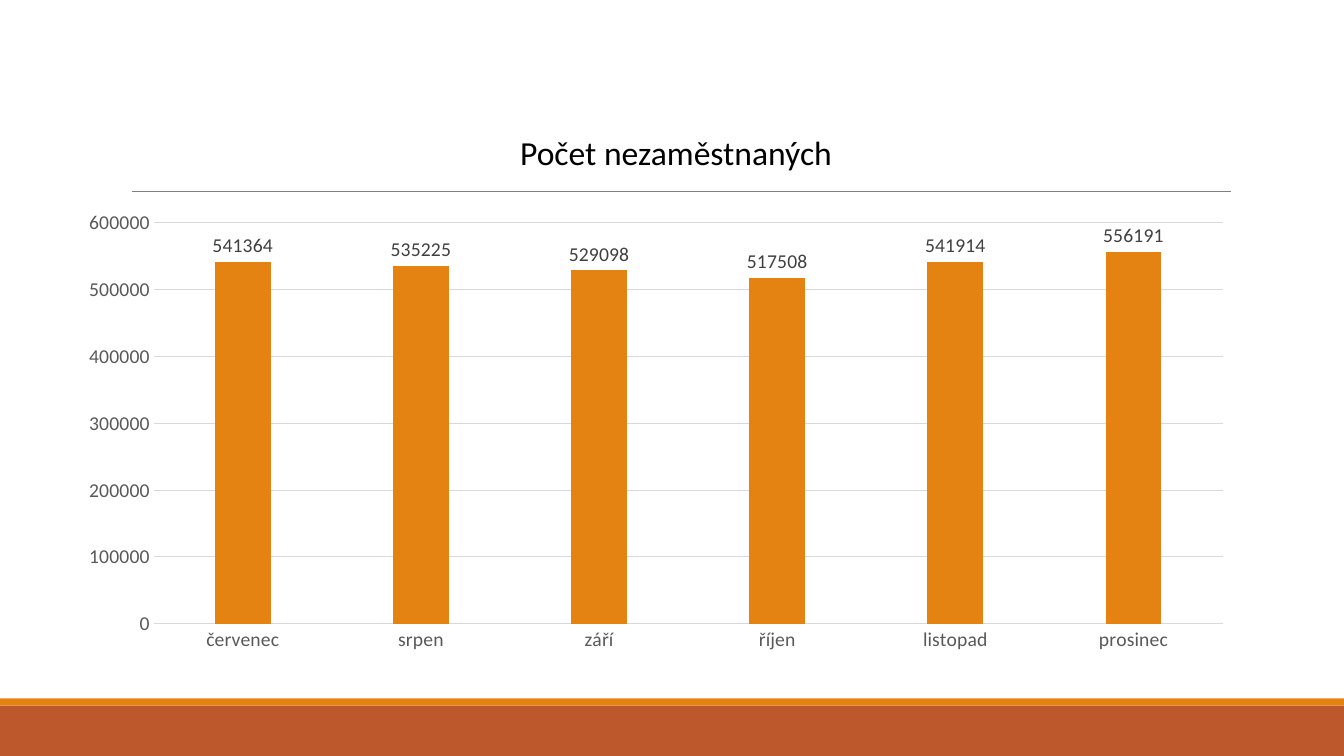
from dataclasses import dataclass

from lxml import etree
from pptx import Presentation
from pptx.chart.data import CategoryChartData
from pptx.dml.color import RGBColor
from pptx.enum import chart as charts, shapes, text
from pptx.oxml.ns import qn
from pptx.util import Inches, Pt


@dataclass(frozen=True)
class Theme:
    font: str = "Calibri"
    title_size: int = 24
    label_size: int = 14
    ink: str = "000000"
    value_ink: str = "404040"
    axis_ink: str = "595959"
    grid: str = "D9D9D9"
    rule: str = "808080"
    orange: str = "E48312"
    rust: str = "BD582C"


@dataclass(frozen=True)
class Band:
    top: float
    height: float
    color: str


THEME = Theme()
WIDTH, HEIGHT = 13.33, 7.5
BANDS = [Band(7, 0.5, THEME.rust), Band(6.93, 0.07, THEME.orange)]
UNEMPLOYED = {
    "červenec": 541364,
    "srpen": 535225,
    "září": 529098,
    "říjen": 517508,
    "listopad": 541914,
    "prosinec": 556191,
}


def style_font(font, size: int, color: str) -> None:
    font.name = THEME.font
    font.size = Pt(size)
    font.color.rgb = RGBColor.from_string(color)


def style_line(line, color: str, width: float) -> None:
    line.color.rgb = RGBColor.from_string(color)
    line.width = Pt(width)


def draw_band(slide, band: Band) -> None:
    strip = slide.shapes.add_shape(
        shapes.MSO_SHAPE.RECTANGLE,
        Inches(0), Inches(band.top), Inches(WIDTH), Inches(band.height))
    strip.shadow.inherit = False
    strip.fill.solid()
    strip.fill.fore_color.rgb = RGBColor.from_string(band.color)
    strip.line.fill.background()


def draw_rule(slide) -> None:
    rule = slide.shapes.add_connector(
        shapes.MSO_CONNECTOR.STRAIGHT,
        Inches(1.31), Inches(1.9), Inches(12.21), Inches(1.9))
    style_line(rule.line, THEME.rule, 0.5)
    etree.SubElement(rule._element.spPr, qn("a:effectLst"))


def draw_chart(slide) -> None:
    data = CategoryChartData()
    data.categories = list(UNEMPLOYED)
    data.add_series("Series 1", list(UNEMPLOYED.values()))
    chart = slide.shapes.add_chart(
        charts.XL_CHART_TYPE.COLUMN_CLUSTERED,
        Inches(0.65), Inches(2), Inches(11.71), Inches(4.56), data).chart
    chart.has_legend = False
    chart.has_title = False
    style_font(chart.font, 10, THEME.ink)

    # Axes and gridlines
    months, counts = chart.category_axis, chart.value_axis
    for axis in (months, counts):
        axis.major_tick_mark = charts.XL_TICK_MARK.NONE
        axis.minor_tick_mark = charts.XL_TICK_MARK.NONE
        style_font(axis.tick_labels.font, THEME.label_size, THEME.axis_ink)
    style_line(months.format.line, THEME.grid, 0.75)
    counts.format.line.fill.background()
    counts.minimum_scale = 0
    counts.maximum_scale = 600000
    counts.major_unit = 100000
    style_line(counts.major_gridlines.format.line, THEME.grid, 0.75)

    # Columns and their values
    columns = chart.plots[0]
    columns.gap_width = 219
    columns.overlap = -27
    columns.vary_by_categories = False
    series = columns.series[0]
    series.format.fill.solid()
    series.format.fill.fore_color.rgb = RGBColor.from_string(THEME.orange)
    values = series.data_labels
    values.show_value = True
    values.position = charts.XL_LABEL_POSITION.OUTSIDE_END
    style_font(values.font, THEME.label_size, THEME.value_ink)


def place_title(slide) -> None:
    title = slide.shapes.title
    title.left, title.top = Inches(1.29), Inches(1.26)
    title.width, title.height = Inches(10.83), Inches(0.5)
    frame = title.text_frame
    frame.text = "Počet nezaměstnaných"
    frame.word_wrap = True
    frame.auto_size = text.MSO_AUTO_SIZE.SHAPE_TO_FIT_TEXT
    frame.vertical_anchor = text.MSO_ANCHOR.TOP
    heading = frame.paragraphs[0]
    heading.alignment = text.PP_ALIGN.CENTER
    style_font(heading.font, THEME.title_size, THEME.ink)


def main() -> None:
    deck = Presentation()
    deck.slide_width, deck.slide_height = Inches(WIDTH), Inches(HEIGHT)
    slide = deck.slides.add_slide(deck.slide_layouts.get_by_name("Title Only"))
    for band in BANDS:
        draw_band(slide, band)
    draw_rule(slide)
    draw_chart(slide)
    place_title(slide)
    deck.save("out.pptx")


if __name__ == "__main__":
    main()
